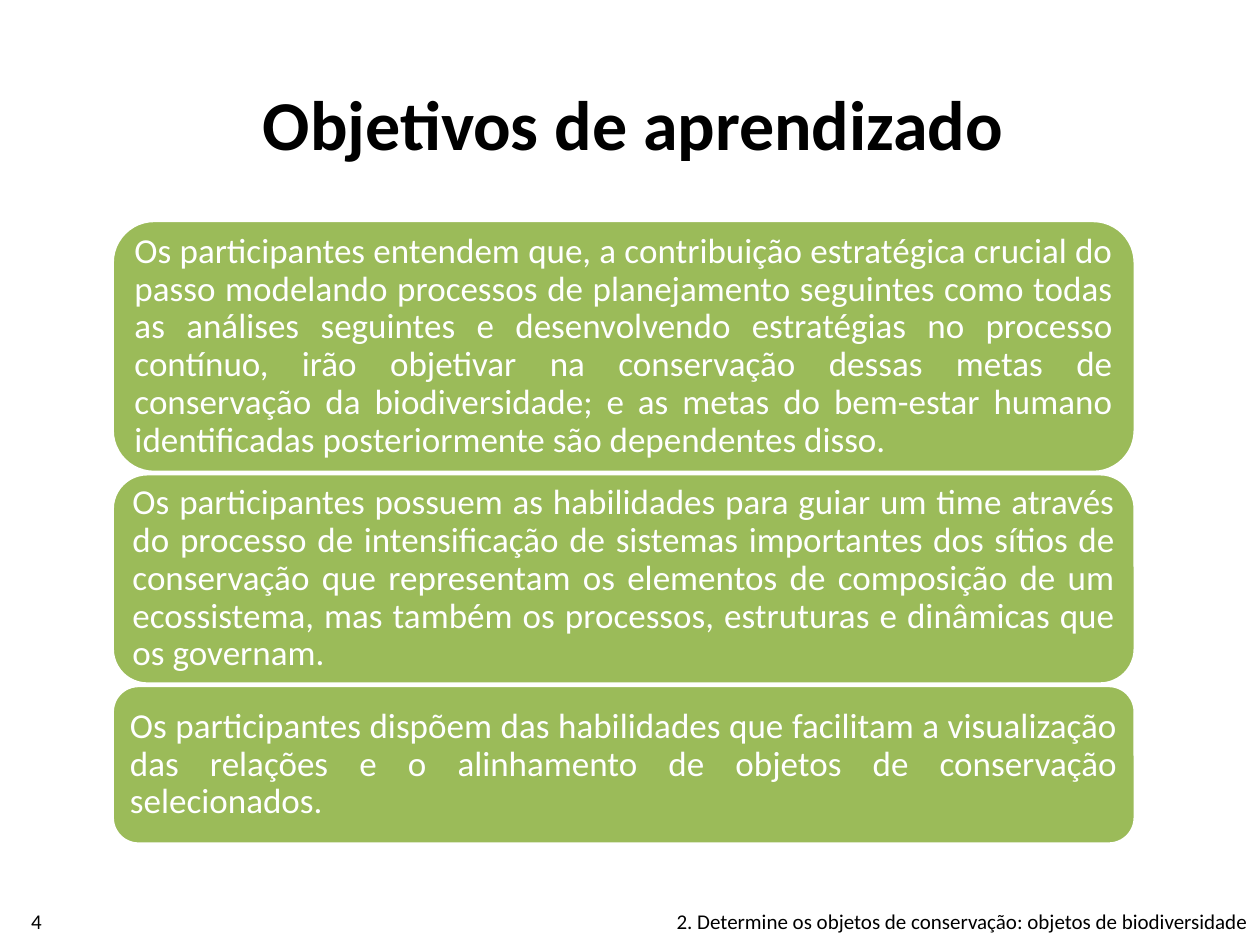
from pptx import Presentation
from pptx.dml.color import RGBColor
from pptx.enum.shapes import MSO_SHAPE as Shape
from pptx.enum.text import MSO_ANCHOR as Anchor, PP_ALIGN as Align
from pptx.util import Inches, Pt

BLACK = RGBColor(0x00, 0x00, 0x00)
WHITE = RGBColor(0xFF, 0xFF, 0xFF)
GREEN = RGBColor(0x9B, 0xBB, 0x59)

GOALS = [
    (2.0, "Os participantes entendem que, a contribuição estratégica crucial do "
          "passo modelando processos de planejamento seguintes como todas as "
          "análises seguintes e desenvolvendo estratégias no processo contínuo, "
          "irão objetivar na conservação dessas metas de conservação da "
          "biodiversidade; e as metas do bem-estar humano identificadas "
          "posteriormente são dependentes disso."),
    (1.67, "Os participantes possuem as habilidades para guiar um time através "
           "do processo de intensificação de sistemas importantes dos sítios de "
           "conservação que representam os elementos de composição de um "
           "ecossistema, mas também os processos, estruturas e dinâmicas que "
           "os governam."),
    (1.26, "Os participantes dispõem das habilidades que facilitam a "
           "visualização das relações e o alinhamento de objetos de "
           "conservação selecionados."),
]


class Deck:
    font = "Calibri"
    inset = Inches(0.08)

    def __init__(self, prs):
        self.slide = prs.slides.add_slide(prs.slide_layouts[5])

    def add_text(self, shape, text, size, color, align, bold=False):
        frame = shape.text_frame
        frame.word_wrap = True
        frame.vertical_anchor = Anchor.MIDDLE
        para = frame.paragraphs[0]
        para.alignment = align
        run = para.add_run()
        run.text = text
        font = run.font
        font.name, font.size, font.bold = self.font, Pt(size), bold
        font.color.rgb = color
        return para

    def title(self, text, x, y, w, h):
        shape = self.slide.shapes.title
        shape.left, shape.top = Inches(x), Inches(y)
        shape.width, shape.height = Inches(w), Inches(h)
        self.add_text(shape, text, 40, BLACK, Align.CENTER, bold=True)

    def panel(self, text, x, y, w, h):
        shape = self.slide.shapes.add_shape(
            Shape.ROUNDED_RECTANGLE, Inches(x), Inches(y), Inches(w), Inches(h))
        shape.shadow.inherit = False
        shape.fill.solid()
        shape.fill.fore_color.rgb = GREEN
        shape.line.color.rgb = WHITE
        shape.line.width = Pt(2)
        frame = shape.text_frame
        frame.margin_left = frame.margin_right = self.inset
        frame.margin_top = frame.margin_bottom = self.inset
        para = self.add_text(shape, text, 20, WHITE, Align.JUSTIFY)
        para.line_spacing = 0.9

    def label(self, text, x, y, w, h, align):
        box = self.slide.shapes.add_textbox(
            Inches(x), Inches(y), Inches(w), Inches(h))
        self.add_text(box, text, 12, BLACK, align)


def main():
    prs = Presentation()
    prs.slide_width, prs.slide_height = Inches(10), Inches(7.5)
    deck = Deck(prs)
    deck.title("Objetivos de aprendizado", 1.42, 0.38, 7.21, 1.18)

    top, gap = 1.75, 0.01
    for height, text in GOALS:
        deck.panel(text, 0.89, top, 8.12, height)
        top += height + gap

    deck.label("4", -0.01, 7.12, 0.6, 0.38, Align.CENTER)
    deck.label("2. Determine os objetos de conservação: objetos de biodiversidade",
               4.13, 7.12, 5.87, 0.38, Align.RIGHT)
    prs.save("out.pptx")


if __name__ == "__main__":
    main()
